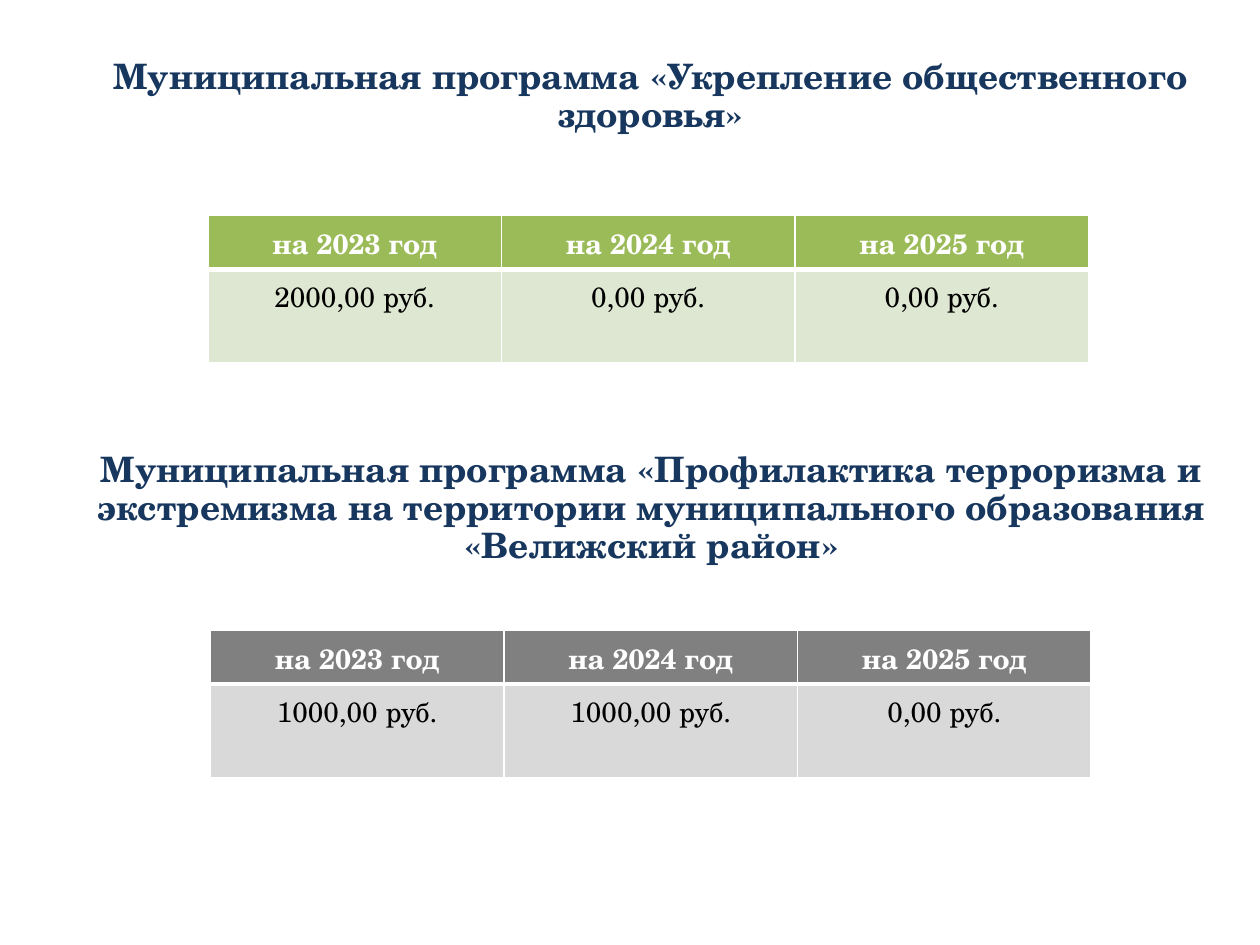
from dataclasses import dataclass

from lxml import etree
from pptx import Presentation
from pptx.dml.color import RGBColor
from pptx.enum.text import MSO_ANCHOR, PP_ALIGN
from pptx.oxml.ns import qn
from pptx.util import Inches, Pt

CENTER = PP_ALIGN.CENTER
TOP, BOTTOM = MSO_ANCHOR.TOP, MSO_ANCHOR.BOTTOM


@dataclass(frozen=True)
class Theme:
    font: str = "TeX Gyre Schola"
    title_size: int = 20
    table_size: int = 16
    title: str = "17375E"
    header_text: str = "FFFFFF"
    body_text: str = "000000"
    border: str = "FFFFFF"
    green: tuple = ("9BBB59", "DEE7D1")
    gray: tuple = ("808080", "D9D9D9")


THEME = Theme()
YEARS = ["на 2023 год", "на 2024 год", "на 2025 год"]
COLUMN_WIDTH = 2.33
ROW_HEIGHTS = [0.43, 0.74]

# Each program: title, title box, table position, fills, amounts
PROGRAMS = [
    ("Муниципальная программа «Укрепление общественного здоровья»",
     (0.33, 0, 9.67, 1.12), (1.65, 1.71), THEME.green,
     ["2000,00 руб.", "0,00 руб.", "0,00 руб."]),
    ("Муниципальная программа «Профилактика терроризма и экстремизма "
     "на территории муниципального образования «Велижский район»",
     (0.51, 3.46, 9.32, 1.08), (1.67, 5), THEME.gray,
     ["1000,00 руб.", "1000,00 руб.", "0,00 руб."]),
]


def write_text(text_frame, text, size, color, bold):
    paragraph = text_frame.paragraphs[0]
    paragraph.alignment = CENTER
    run = paragraph.add_run()
    run.text = text
    run.font.name = THEME.font
    run.font.size = Pt(size)
    run.font.bold = bold
    run.font.color.rgb = RGBColor.from_string(color)
    return paragraph


def set_borders(cell, widths):
    properties = cell._tc.get_or_add_tcPr()
    for index, (side, width) in enumerate(widths.items()):
        line = etree.Element(qn(f"a:{side}"), w=str(Pt(width)))
        fill = etree.SubElement(line, qn("a:solidFill"))
        etree.SubElement(fill, qn("a:srgbClr"), val=THEME.border)
        properties.insert(index, line)  # borders come before the fill


presentation = Presentation()
presentation.slide_width = Inches(10)
presentation.slide_height = Inches(7.5)
slide = presentation.slides.add_slide(presentation.slide_layouts[6])

for title, title_box, (left, top), fills, amounts in PROGRAMS:
    # Program title
    text_frame = slide.shapes.add_textbox(*map(Inches, title_box)).text_frame
    text_frame.word_wrap = True
    text_frame.vertical_anchor = BOTTOM
    paragraph = write_text(text_frame, title, THEME.title_size, THEME.title, True)
    paragraph.line_spacing = 0.9

    # Funding table
    table = slide.shapes.add_table(
        len(ROW_HEIGHTS), len(YEARS), Inches(left), Inches(top),
        Inches(COLUMN_WIDTH * len(YEARS)), Inches(sum(ROW_HEIGHTS))).table
    for column in table.columns:
        column.width = Inches(COLUMN_WIDTH)
    for row, height in zip(table.rows, ROW_HEIGHTS):
        row.height = Inches(height)

    for row_index, values in enumerate([YEARS, amounts]):
        is_header = row_index == 0
        color = THEME.header_text if is_header else THEME.body_text
        for column_index, value in enumerate(values):
            cell = table.cell(row_index, column_index)
            cell.vertical_anchor = TOP
            cell.fill.solid()
            cell.fill.fore_color.rgb = RGBColor.from_string(fills[row_index])
            set_borders(cell, {"lnL": 1, "lnR": 1,
                               "lnT": 1 if is_header else 3,
                               "lnB": 3 if is_header else 1})
            write_text(cell.text_frame, value, THEME.table_size, color, is_header)

presentation.save("out.pptx")
